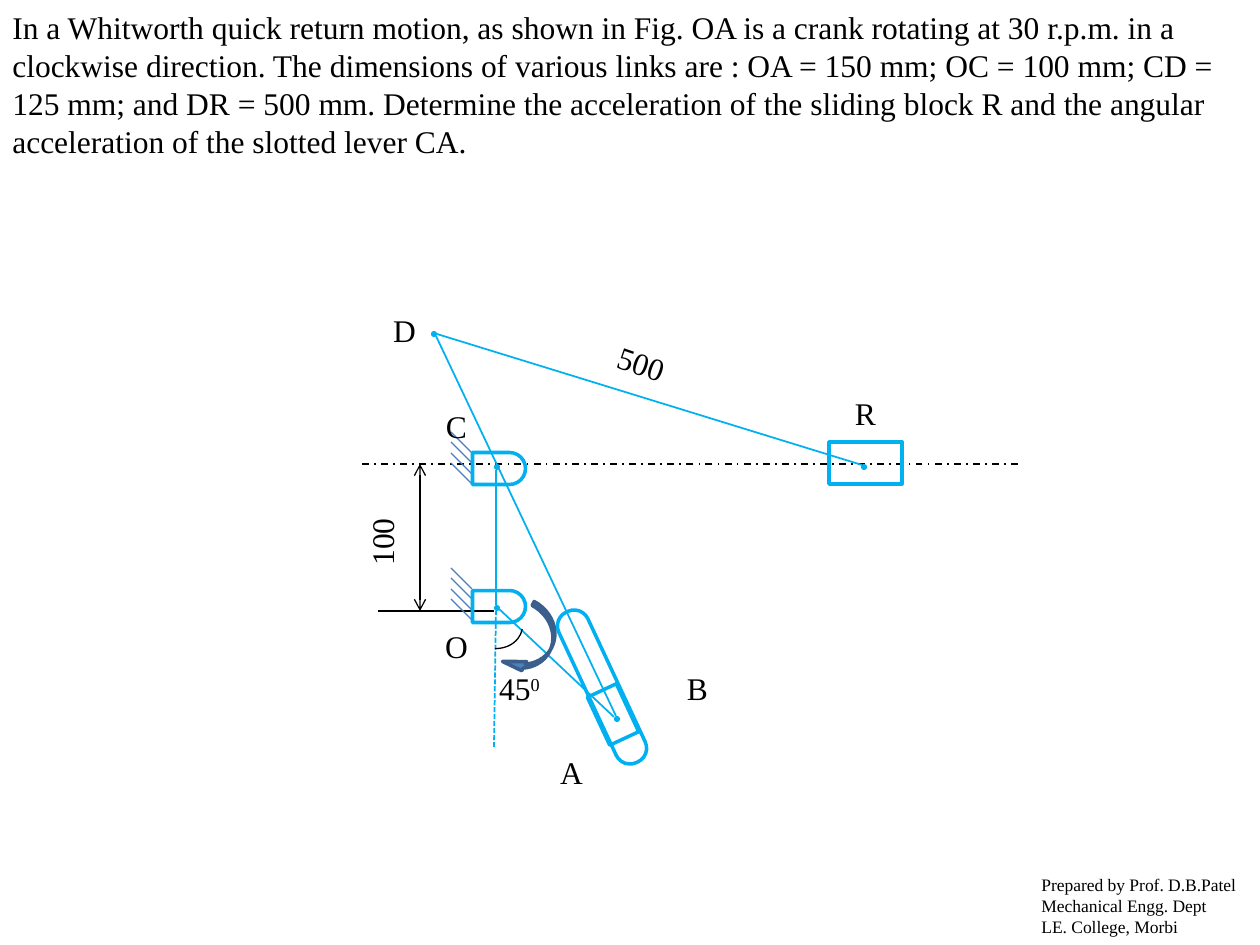
"""Builds the slide with the Whitworth quick return motion problem."""
from lxml.etree import SubElement
from pptx import Presentation
from pptx.dml.color import RGBColor
from pptx.enum.dml import MSO_LINE
from pptx.enum.shapes import MSO_CONNECTOR, MSO_SHAPE
from pptx.enum.text import MSO_ANCHOR, PP_ALIGN
from pptx.oxml.ns import qn
from pptx.util import Emu, Pt

PROBLEM = (
    "In a Whitworth quick return motion, as shown in Fig. OA is a crank rotating at 30 r.p.m. "
    "in a clockwise direction. The dimensions of various links are : OA = 150 mm; OC = 100 mm; "
    "CD = 125 mm; and DR = 500 mm. Determine the acceleration of the sliding block R and the "
    "angular acceleration of the slotted lever CA."
)
CREDIT = "Prepared by Prof. D.B.Patel\nMechanical Engg. Dept\nLE. College, Morbi"
LABELS = [
    ("O", 420, 621, 0), ("A", 535, 747, 0), ("B", 661, 663, 0),
    ("C", 420, 401, 0), ("D", 368, 305, 0), ("R", 829, 388, 0),
    ("100", 345, 517, 270), ("500", 605, 338, 18.9),
]
PINS = [(614, 716), (494, 464), (861, 464), (494, 605), (431, 331)]
LINKS = [
    (436, 336, 616, 716), (437, 334, 862, 465),
    (614, 717, 496, 606), (496, 605, 496, 470),
]
BEARINGS = [(442, 432), (580, 568)]


def px(length):
    return Emu(round(length * 914400 / 126))


def color(value):
    return RGBColor.from_string(value)


class Diagram:
    """Holds the style and the page being drawn."""

    font = "Times New Roman"
    ink = "000000"
    link = "00B0F0"
    hatch = "4B7EBC"

    def __init__(self, page):
        self.page = page

    def text(self, content, left, top, width, height, size=18, align=PP_ALIGN.LEFT,
             anchor=MSO_ANCHOR.TOP, rotation=0):
        box = self.page.shapes.add_textbox(px(left), px(top), px(width), px(height))
        box.rotation = rotation
        frame = box.text_frame
        frame.word_wrap = True
        frame.vertical_anchor = anchor
        frame.text = content
        for para in frame.paragraphs:
            para.alignment = align
            for span in para.runs:
                self.style(span, size)
        return box

    def style(self, span, size):
        span.font.name = self.font
        span.font.size = Pt(size)
        span.font.color.rgb = color(self.ink)

    def label(self, content, left, top, rotation=0):
        return self.text(content, left, top, 73, 50, align=PP_ALIGN.CENTER, rotation=rotation)

    def angle(self, degrees, left, top):
        para = self.label(degrees, left, top).text_frame.paragraphs[0]
        span = para.add_run()
        span.text = "0"
        self.style(span, 18)
        span.font._element.set("baseline", "30000")

    def shape(self, kind, left, top, width, height, line=None, weight=2, fill=None,
              rotation=0, adjust=()):
        item = self.page.shapes.add_shape(kind, px(left), px(top), px(width), px(height))
        item.shadow.inherit = False
        item.rotation = rotation
        for index, value in enumerate(adjust):
            item.adjustments[index] = value
        if fill:
            item.fill.solid()
            item.fill.fore_color.rgb = color(fill)
        else:
            item.fill.background()
        if line:
            item.line.color.rgb = color(line)
            item.line.width = Pt(weight)
        else:
            item.line.fill.background()
        return item

    def pin(self, left, top):
        self.shape(MSO_SHAPE.OVAL, left, top, 6, 6, fill=self.link)

    def line(self, x1, y1, x2, y2, stroke, weight=1, dash=None):
        item = self.page.shapes.add_connector(
            MSO_CONNECTOR.STRAIGHT, px(x1), px(y1), px(x2), px(y2))
        item.line.color.rgb = color(stroke)
        item.line.width = Pt(weight)
        if dash:
            item.line.dash_style = dash
        SubElement(item._element.spPr, qn("a:effectLst"))
        return item

    def dimension(self, x1, y1, x2, y2):
        outline = self.line(x1, y1, x2, y2, self.ink, 0.75).line._get_or_add_ln()
        for end in ("a:headEnd", "a:tailEnd"):
            SubElement(outline, qn(end)).set("type", "arrow")

    def bearing(self, top, hatch_top):
        for step in range(4):
            start = hatch_top + step * 21 // 2
            self.line(451, start, 472, start + 21, self.hatch, 0.75)
        self.shape(MSO_SHAPE.ROUND_2_SAME_RECTANGLE, 483, top, 32, 53, self.link,
                   rotation=90, adjust=(0.5, 0))

    def turn_arrow(self, left, top, width, height):
        arrow = self.shape(MSO_SHAPE.CURVED_RIGHT_ARROW, left, top, width, height, "3A5F8C",
                           fill="4F81BD", rotation=27.9, adjust=(0.119, 0.281, 0.578))
        arrow._element.spPr.xfrm.set("flipH", "1")


def main():
    deck = Presentation()
    deck.slide_width, deck.slide_height = px(1260), px(945)
    page = deck.slides.add_slide(deck.slide_layouts[6])
    diagram = Diagram(page)

    diagram.text(PROBLEM, 0, 0, 1260, 168, anchor=MSO_ANCHOR.MIDDLE)
    diagram.line(1018, 464, 357, 464, diagram.ink, dash=MSO_LINE.DASH_DOT)
    for ends in LINKS:
        diagram.line(*ends, diagram.link)
    diagram.line(494, 747, 496, 611, diagram.link, dash=MSO_LINE.SQUARE_DOT)
    diagram.shape(MSO_SHAPE.RECTANGLE, 829, 442, 73, 42, diagram.link)
    diagram.shape(MSO_SHAPE.ARC, 472, 598, 47, 54, diagram.ink, 0.75,
                  rotation=94.7, adjust=(164.353, 214.106))
    diagram.line(378, 611, 494, 611, diagram.ink, 0.75)
    diagram.dimension(420, 464, 420, 611)
    for top, hatch_top in BEARINGS:
        diagram.bearing(top, hatch_top)
    diagram.turn_arrow(515, 606, 37, 73)
    diagram.shape(MSO_SHAPE.ROUNDED_RECTANGLE, 586, 604, 32, 166, diagram.link,
                  rotation=155, adjust=(0.472,))
    diagram.shape(MSO_SHAPE.RECTANGLE, 597, 688, 32, 53, diagram.link, rotation=155)
    for place in PINS:
        diagram.pin(*place)
    for label in LABELS:
        diagram.label(*label)
    diagram.angle("45", 483, 663)
    diagram.text(CREDIT, 1029, 868, 231, 77, size=10)

    deck.save("out.pptx")


if __name__ == "__main__":
    main()
